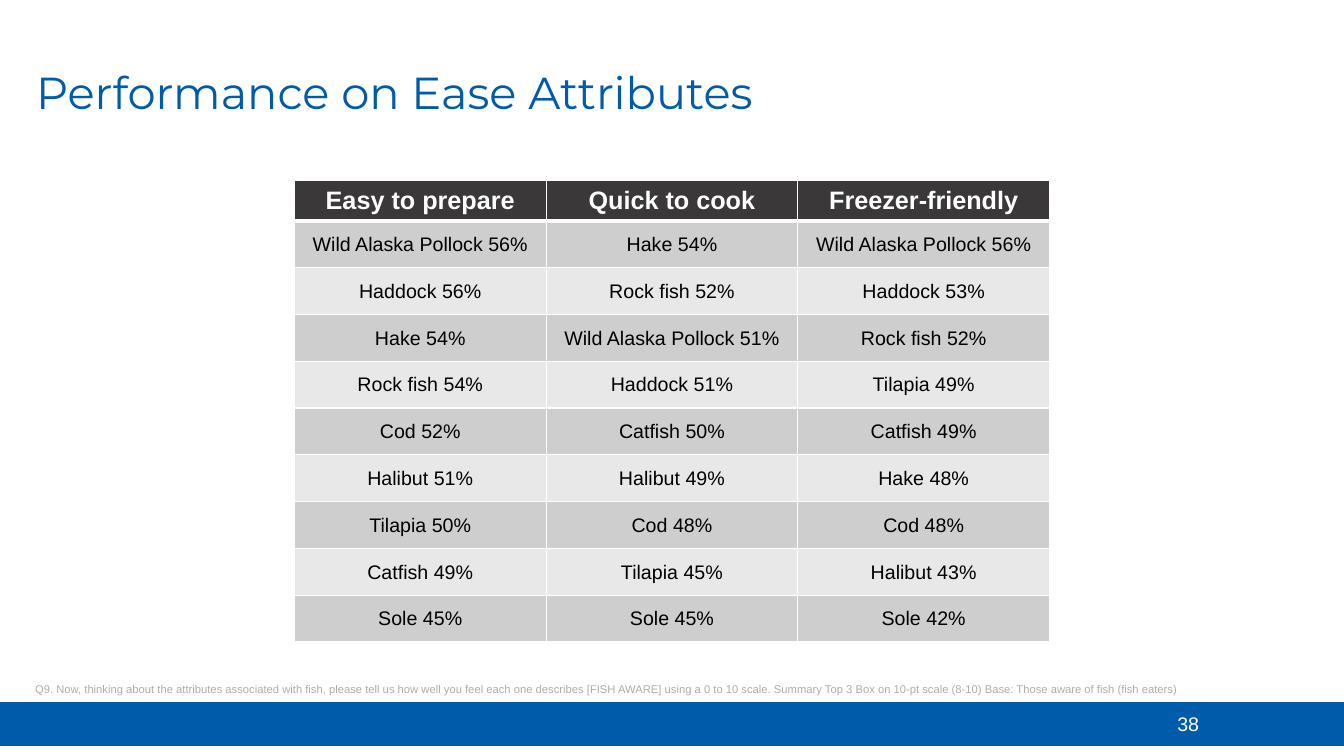
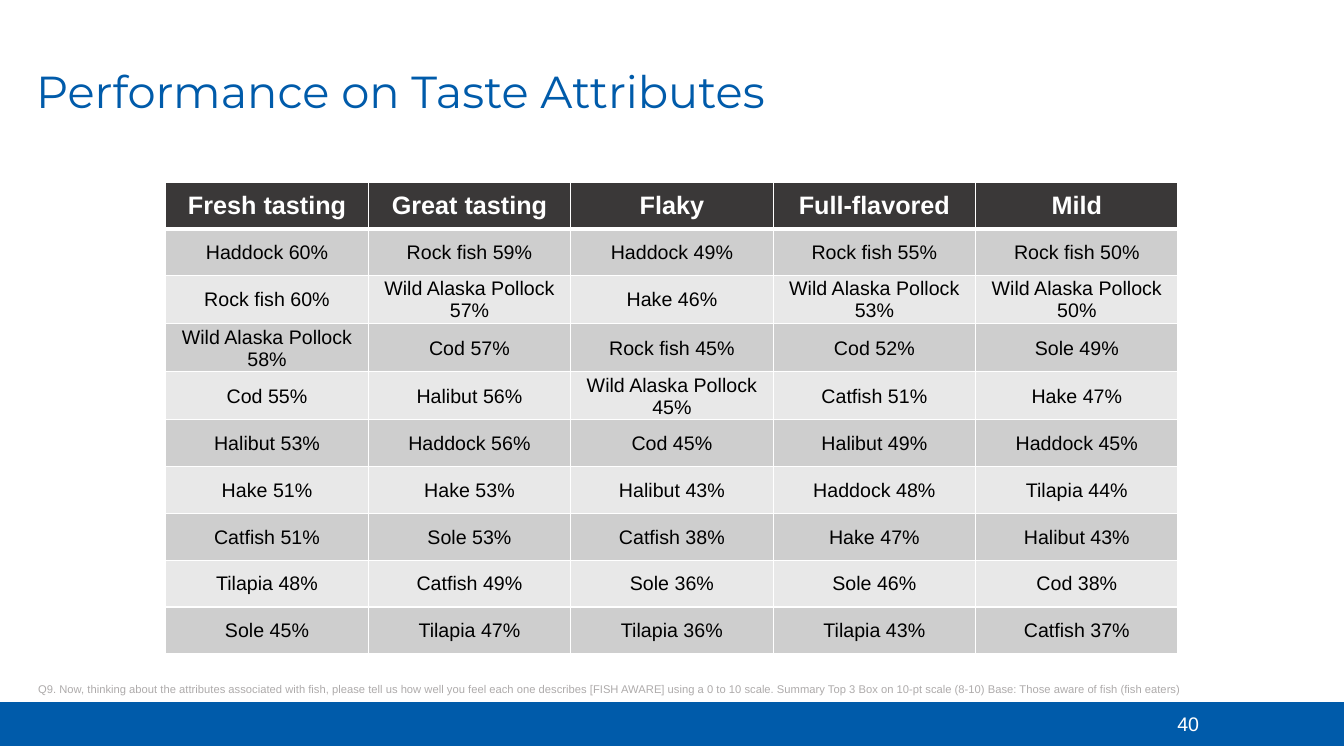
"""Build two slides that rank fish by ease and taste attributes."""
from pptx import Presentation
from pptx.dml.color import RGBColor
from pptx.enum.shapes import MSO_SHAPE
from pptx.enum.text import MSO_ANCHOR, PP_ALIGN
from pptx.oxml import parse_xml
from pptx.oxml.ns import nsdecls
from pptx.util import Pt

PX = 9144
WIDE, HIGH = 1333, 750
BLUE, WHITE, DARK = "005BAA", "FFFFFF", "3A3838"
BANDS = ["CECECE", "E8E8E8"]
TITLE = {"size": Pt(32), "name": "Montserrat", "color": BLUE}
NUMBER = {"size": Pt(14), "name": "Arial", "color": WHITE}
NOTE = {"size": Pt(8), "name": "Arial", "color": "AEABAB"}
HEAD = {"size": Pt(18), "name": "Arial", "color": WHITE, "bold": True}
BODY = {"size": Pt(14), "name": "Arial", "color": "000000", "bold": False}
INSETS = {"margin_left": PX, "margin_top": PX, "margin_right": PX, "margin_bottom": 0}
QUESTION = (
    "Q9. Now, thinking about the attributes associated with fish, please tell us how well "
    "you feel each one describes [FISH AWARE] using a 0 to 10 scale. Summary Top 3 Box on "
    "10-pt scale (8-10) Base: Those aware of fish (fish eaters)"
)

SLIDES = [
    {
        "title": "Performance on Ease Attributes", "title_top": 14, "number": "38",
        "note": (25, 1166), "top": 179, "width": 749, "head": 39,
        "ranks": {
            "Easy to prepare": "Wild Alaska Pollock 56%, Haddock 56%, Hake 54%, Rock fish 54%, "
            "Cod 52%, Halibut 51%, Tilapia 50%, Catfish 49%, Sole 45%",
            "Quick to cook": "Hake 54%, Rock fish 52%, Wild Alaska Pollock 51%, Haddock 51%, "
            "Catfish 50%, Halibut 49%, Cod 48%, Tilapia 45%, Sole 45%",
            "Freezer-friendly": "Wild Alaska Pollock 56%, Haddock 53%, Rock fish 52%, Tilapia 49%, "
            "Catfish 49%, Hake 48%, Cod 48%, Halibut 43%, Sole 42%",
        },
    },
    {
        "title": "Performance on Taste Attributes", "title_top": 13, "number": "40",
        "note": (28, 1174), "top": 181, "width": 1004, "head": 46,
        "ranks": {
            "Fresh tasting": "Haddock 60%, Rock fish 60%, Wild Alaska Pollock 58%, Cod 55%, "
            "Halibut 53%, Hake 51%, Catfish 51%, Tilapia 48%, Sole 45%",
            "Great tasting": "Rock fish 59%, Wild Alaska Pollock 57%, Cod 57%, Halibut 56%, "
            "Haddock 56%, Hake 53%, Sole 53%, Catfish 49%, Tilapia 47%",
            "Flaky": "Haddock 49%, Hake 46%, Rock fish 45%, Wild Alaska Pollock 45%, "
            "Cod 45%, Halibut 43%, Catfish 38%, Sole 36%, Tilapia 36%",
            "Full-flavored": "Rock fish 55%, Wild Alaska Pollock 53%, Cod 52%, Catfish 51%, "
            "Halibut 49%, Haddock 48%, Hake 47%, Sole 46%, Tilapia 43%",
            "Mild": "Rock fish 50%, Wild Alaska Pollock 50%, Sole 49%, Hake 47%, "
            "Haddock 45%, Tilapia 44%, Halibut 43%, Cod 38%, Catfish 37%",
        },
    },
]


def paint(color, code):
    """Set a fill or font colour from a hex string."""
    color.rgb = RGBColor.from_string(code)


def write(frame, words, style, align):
    """Write one styled paragraph into a text frame."""
    frame.word_wrap = True
    line = frame.paragraphs[0]
    line.alignment = align
    run = line.add_run()
    run.text = words
    for key, value in style.items():
        if key == "color":
            paint(run.font.color, value)
        else:
            setattr(run.font, key, value)
    return line


deck = Presentation()
deck.slide_width, deck.slide_height = WIDE * PX, HIGH * PX

for page in SLIDES:
    slide = deck.slides.add_slide(deck.slide_layouts[6])
    band = slide.shapes.add_shape(MSO_SHAPE.RECTANGLE, 0, 697 * PX, WIDE * PX, 42 * PX)
    band.shadow.inherit = False
    band.fill.solid()
    paint(band.fill.fore_color, BLUE)
    paint(band.line.color, BLUE)
    band.line.width = Pt(1)

    left, width = page["note"]
    for words, style, align, box in [
        (page["number"], NUMBER, PP_ALIGN.CENTER, (1125, 701, 107, 40)),
        (page["title"], TITLE, PP_ALIGN.LEFT, (26, page["title_top"], 1137, 109)),
        (QUESTION, NOTE, PP_ALIGN.LEFT, (left, 672, width, 24)),
    ]:
        frame = slide.shapes.add_textbox(*[n * PX for n in box]).text_frame
        line = write(frame, words, style, align)
        if style is TITLE:
            frame.vertical_anchor = MSO_ANCHOR.BOTTOM
            line.line_spacing = 0.9

    ranks = page["ranks"]
    grid = [list(ranks)] + list(zip(*[names.split(", ") for names in ranks.values()]))
    width, head, rest = page["width"] * PX, page["head"] * PX, 418 * PX
    table = slide.shapes.add_table(
        len(grid), len(ranks), (WIDE * PX - width) // 2, page["top"] * PX, width, head + rest
    ).table
    table.horz_banding = False
    for column in table.columns:
        column.width = width // len(ranks)

    for r, names in enumerate(grid):
        table.rows[r].height = rest // (len(grid) - 1) if r else head
        edges = {"L": 1, "R": 1, "T": 3 if r == 1 else 1, "B": 1 if r else 3}
        for c, name in enumerate(names):
            cell = table.cell(r, c)
            cell.vertical_anchor = MSO_ANCHOR.MIDDLE
            for key, value in (INSETS if r else {}).items():
                setattr(cell, key, value)
            write(cell.text_frame, name, BODY if r else HEAD, PP_ALIGN.CENTER)
            cell.fill.solid()
            paint(cell.fill.fore_color, BANDS[(r - 1) % 2] if r else DARK)
            for spot, (side, size) in enumerate(edges.items()):
                cell._tc.tcPr.insert(spot, parse_xml(
                    f'<a:ln{side} {nsdecls("a")} w="{Pt(size)}"><a:solidFill>'
                    f'<a:srgbClr val="{WHITE}"/></a:solidFill></a:ln{side}>'
                ))

deck.save("out.pptx")
